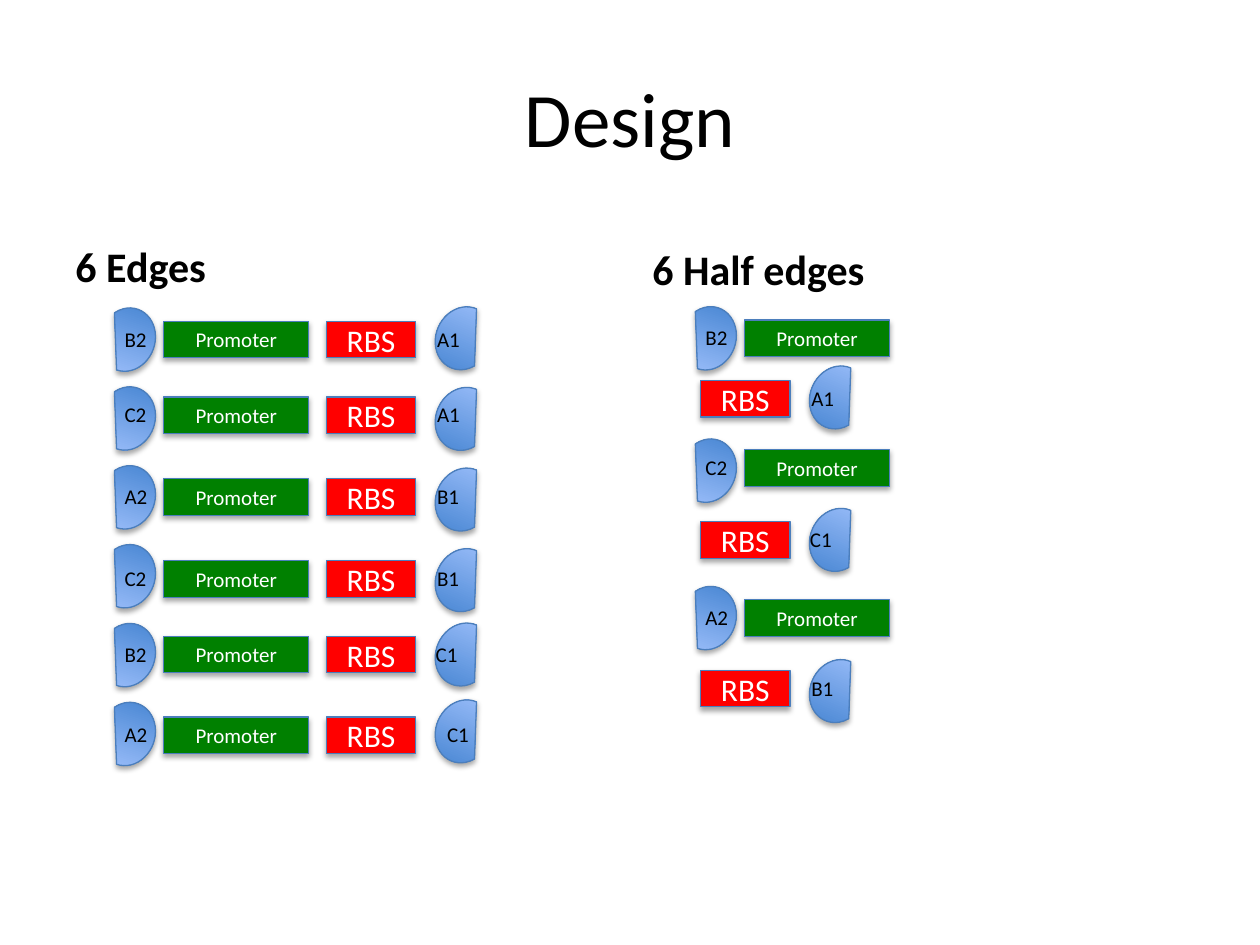
from lxml import etree
from pptx import Presentation
from pptx.dml.color import RGBColor
from pptx.enum.shapes import MSO_SHAPE
from pptx.enum.text import MSO_ANCHOR, MSO_AUTO_SIZE, PP_ALIGN
from pptx.oxml.ns import qn
from pptx.util import Inches, Pt

CHORD, RECT = MSO_SHAPE.CHORD, MSO_SHAPE.RECTANGLE
TOP, MIDDLE, BOTTOM = MSO_ANCHOR.TOP, MSO_ANCHOR.MIDDLE, MSO_ANCHOR.BOTTOM
LEFT, CENTER = PP_ALIGN.LEFT, PP_ALIGN.CENTER
GROW = MSO_AUTO_SIZE.SHAPE_TO_FIT_TEXT

BLACK, WHITE, GREEN, RED = "000000", "FFFFFF", "008000", "FF0000"
EDGE, DARK, LIGHT = "4B7EBC", "3F80CE", "A4C4FF"

# Left site, right site, right chord top, box top, right label shift
EDGES = [
    ("B2", "A1", 2.43, 2.55, 0),
    ("C2", "A1", 3.07, 3.15, 0),
    ("A2", "B1", 3.71, 3.8, 0),
    ("C2", "B1", 4.35, 4.45, 0),
    ("B2", "C1", 4.94, 5.05, -0.01),
    ("A2", "C1", 5.55, 5.69, 0.08),
]
# Site, chord top, box top
STARTS = [("B2", 2.43, 2.54), ("C2", 3.48, 3.57), ("A2", 4.65, 4.76)]
ENDS = [("A1", 2.9, 3.02, 0), ("C1", 4.03, 4.14, -0.01), ("B1", 5.23, 5.32, 0)]


def color(code):
    return RGBColor.from_string(code)


def box(left, top, width, height):
    return [Inches(value) for value in (left, top, width, height)]


def write(shape, text, size, code, align, anchor, bold=False):
    frame = shape.text_frame
    frame.text = text
    frame.word_wrap = True
    frame.vertical_anchor = anchor
    para = frame.paragraphs[0]
    para.alignment = align
    font = para.runs[0].font
    font.name, font.size, font.bold = "Calibri", Pt(size), bold
    font.color.rgb = color(code)
    return para


def style(shape):
    """Give a shape its blue outline and soft drop shadow."""
    shape.line.color.rgb = color(EDGE)
    shape.line.width = Pt(0.75)
    shape.shadow.inherit = False
    effects = shape._element.spPr.find(qn("a:effectLst"))
    drop = etree.SubElement(effects, qn("a:outerShdw"), blurRad=str(Pt(3.1)),
                            dist=str(Pt(1.8)), dir="5400000", rotWithShape="0")
    tint = etree.SubElement(drop, qn("a:srgbClr"), val=BLACK)
    etree.SubElement(tint, qn("a:alpha"), val="35000")


def heading(slide, text, place, size, align, anchor, bold=False):
    shape = slide.shapes.add_textbox(*box(*place))
    return write(shape, text, size, BLACK, align, anchor, bold)


def block(slide, text, left, top, width, fill, size):
    shape = slide.shapes.add_shape(RECT, *box(left, top, width, 0.29))
    shape.fill.solid()
    shape.fill.fore_color.rgb = color(fill)
    style(shape)
    write(shape, text, size, WHITE, CENTER, MIDDLE)


def chord(slide, left, top, angle):
    shape = slide.shapes.add_shape(CHORD, *box(left, top, 0.44, 0.51))
    shape.rotation = angle
    shape.fill.gradient()
    shape.fill.gradient_angle = 90
    for stop, code in zip(shape.fill.gradient_stops, (DARK, LIGHT)):
        stop.color.rgb = color(code)
    style(shape)


def label(slide, text, left, top, width):
    shape = slide.shapes.add_textbox(*box(left, top, width, 0.3))
    write(shape, text, 12, BLACK, LEFT, TOP)
    shape.text_frame.auto_size = GROW


def start(slide, site, left, arc, top):
    """Draw a left site followed by its promoter."""
    chord(slide, left, arc, 199.4)
    block(slide, "Promoter", left + 0.51, top, 1.15, GREEN, 12)
    label(slide, site, left + 0.1, top - 0.01, 0.58)


def end(slide, site, left, arc, top, shift):
    """Draw an RBS followed by its right site."""
    chord(slide, left + 0.87, arc, 23.6)
    block(slide, "RBS", left, top, 0.71, RED, 18)
    label(slide, site, left + 0.78 + shift, top - 0.01, 0.52)


def main():
    deck = Presentation()
    deck.slide_width, deck.slide_height = Inches(10), Inches(7.5)
    slide = deck.slides.add_slide(deck.slide_layouts[6])

    # Title and column headings
    heading(slide, "Design", (0.5, 0.3, 9, 1.25), 44, CENTER, MIDDLE)
    for text, left, top in (("6 Edges", 0.5, 1.66), ("6 Half edges", 5.08, 1.68)):
        para = heading(slide, text, (left, top, 4.42, 0.7), 24, LEFT, BOTTOM, True)
        para.space_before = Pt(4.8)

    # Full edges
    for row, (first, last, arc, top, shift) in enumerate(EDGES):
        start(slide, first, 0.79, 2.44 + 0.626 * row, top)
        end(slide, last, 2.59, arc, top, shift)

    # Half edges
    for site, arc, top in STARTS:
        start(slide, site, 5.4, arc, top)
    for site, arc, top, shift in ENDS:
        end(slide, site, 5.56, arc, top, shift)

    deck.save("out.pptx")


if __name__ == "__main__":
    main()
